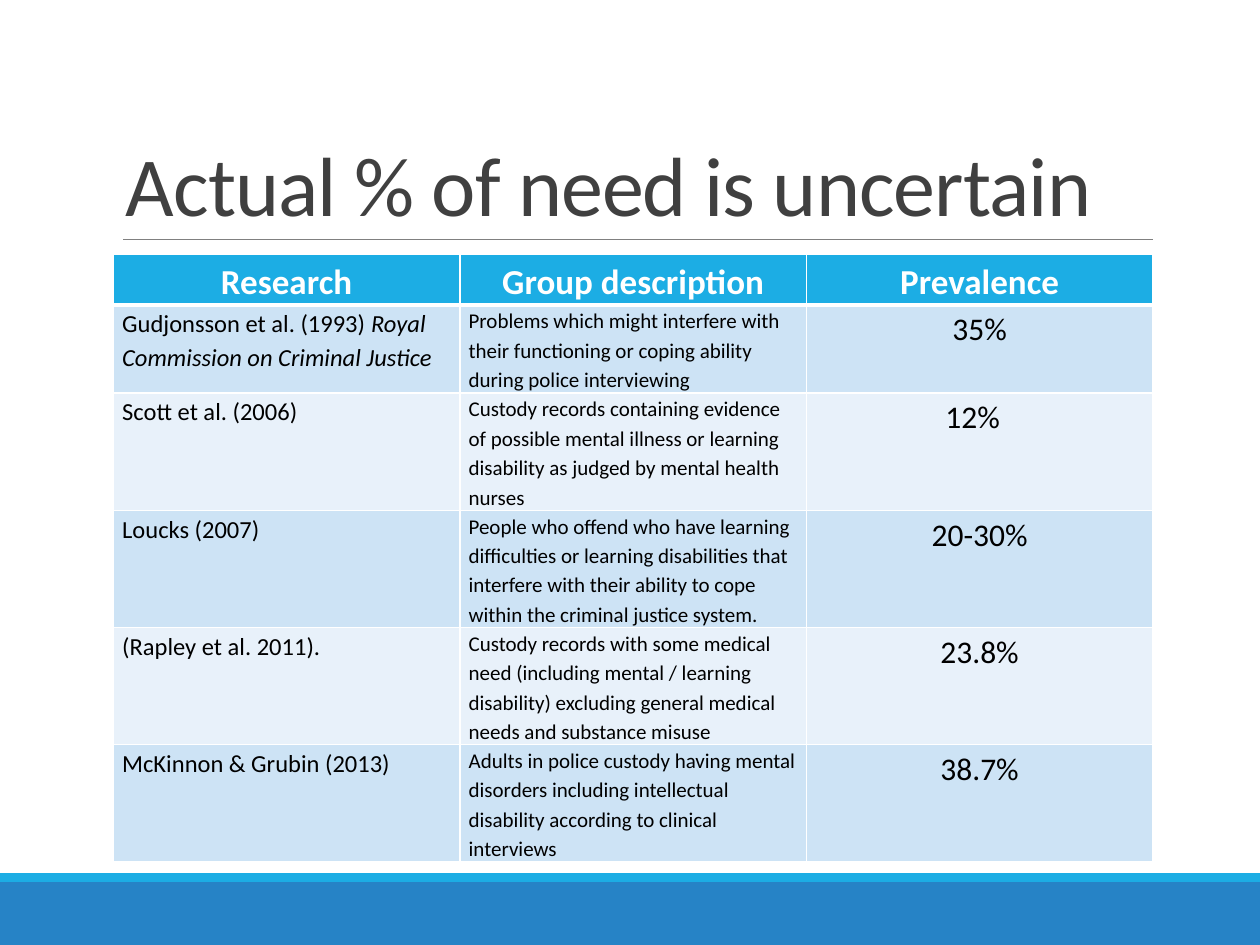
from lxml.etree import SubElement
from pptx import Presentation
from pptx.dml.color import RGBColor
from pptx.enum.shapes import MSO_CONNECTOR as LINE, MSO_SHAPE as SHAPE
from pptx.enum.text import MSO_ANCHOR as ANCHOR, PP_ALIGN as ALIGN
from pptx.oxml import parse_xml
from pptx.oxml.ns import nsdecls, qn
from pptx.util import Inches, Pt

BLUE = RGBColor(0x26, 0x83, 0xC6)
CYAN = RGBColor(0x1C, 0xAD, 0xE4)
GREY = RGBColor(0x80, 0x80, 0x80)
DARK = RGBColor(0x40, 0x40, 0x40)
BLACK = RGBColor(0, 0, 0)
WHITE = RGBColor(0xFF, 0xFF, 0xFF)
BANDS = [RGBColor(0xCD, 0xE3, 0xF5), RGBColor(0xE8, 0xF1, 0xFA)]

LEFT, COLUMN = 0.9, 2.75
ROWS = [0.4, 0.7] + [0.93] * 4
SIZES = [14, 12, 18]
ALIGNS = [ALIGN.LEFT, ALIGN.LEFT, ALIGN.CENTER]

HEADINGS = ["Research", "Group description", "Prevalence"]
STUDIES = [
    ["Gudjonsson et al. (1993) |Royal Commission on Criminal Justice",
     "Problems which might interfere with their functioning or coping ability "
     "during police interviewing", "35%"],
    ["Scott et al. (2006)",
     "Custody records containing evidence of possible mental illness or learning "
     "disability as judged by mental health nurses", "12%"],
    ["Loucks (2007)",
     "People who offend who have learning difficulties or learning disabilities that "
     "interfere with their ability to cope within the criminal justice system.", "20-30%"],
    ["(Rapley et al. 2011).",
     "Custody records with some medical need (including mental / learning disability) "
     "excluding general medical needs and substance misuse", "23.8%"],
    ["McKinnon & Grubin (2013)",
     "Adults in police custody having mental disorders including intellectual "
     "disability according to clinical interviews", "38.7%"],
]


def add_span(para, text, size, color, bold=False, italic=False):
    span = para.add_run()
    span.text = text
    font = span.font
    font.name, font.size, font.bold, font.italic = "Calibri", Pt(size), bold, italic
    font.color.rgb = color
    return span


def set_borders(cell, bottom):
    props = cell._tc.get_or_add_tcPr()
    for place, (side, width) in enumerate([("L", 1), ("R", 1), ("T", 1), ("B", bottom)]):
        props.insert(place, parse_xml(
            f'<a:ln{side} {nsdecls("a")} w="{Pt(width)}"><a:solidFill>'
            f'<a:srgbClr val="{WHITE}"/></a:solidFill></a:ln{side}>'))


deck = Presentation()
deck.slide_width, deck.slide_height = Inches(10), Inches(7.5)
page = deck.slides.add_slide(deck.slide_layouts[6])

# Footer bands
for top, height, color in [(7, 0.5, BLUE), (6.93, 0.07, CYAN)]:
    band = page.shapes.add_shape(SHAPE.RECTANGLE, 0, Inches(top),
                                 deck.slide_width, Inches(height))
    band.shadow.inherit = False
    band.fill.solid()
    band.fill.fore_color.rgb = color
    band.line.fill.background()

# Rule under the title
rule = page.shapes.add_connector(LINE.STRAIGHT, Inches(0.98), Inches(1.9),
                                 Inches(9.15), Inches(1.9))
rule.line.color.rgb = GREY
rule.line.width = Pt(0.5)
SubElement(rule._element.spPr, qn("a:effectLst"))

# Title
box = page.shapes.add_textbox(Inches(LEFT), Inches(0.31), Inches(3 * COLUMN), Inches(1.59))
frame = box.text_frame
frame.word_wrap = True
frame.vertical_anchor = ANCHOR.BOTTOM
para = frame.paragraphs[0]
para.line_spacing = 0.85
title = add_span(para, "Actual % of need is uncertain", 48, DARK)
title.font._element.set("spc", "-50")

# Table of studies
table = page.shapes.add_table(len(ROWS), len(HEADINGS), Inches(LEFT), Inches(2.02),
                              Inches(3 * COLUMN), Inches(sum(ROWS))).table
for column in table.columns:
    column.width = Inches(COLUMN)
for row, height in zip(table.rows, ROWS):
    row.height = Inches(height)

for r, texts in enumerate([HEADINGS] + STUDIES):
    header = r == 0
    for c, text in enumerate(texts):
        cell = table.cell(r, c)
        cell.margin_left = cell.margin_right = Inches(0.07)
        cell.margin_top = cell.margin_bottom = 0
        cell.fill.solid()
        cell.fill.fore_color.rgb = CYAN if header else BANDS[(r - 1) % 2]
        set_borders(cell, 3 if header else 1)
        para = cell.text_frame.paragraphs[0]
        para.line_spacing = 1.15
        para.alignment = ALIGN.CENTER if header else ALIGNS[c]
        # The part after a bar is set in italics
        for part, words in enumerate(text.split("|")):
            add_span(para, words, 20 if header else SIZES[c],
                     WHITE if header else BLACK, bold=header, italic=part > 0)

# The 12% figure sits slightly left of centre
table.cell(2, 2).margin_right = Inches(0.18)

deck.save("out.pptx")
